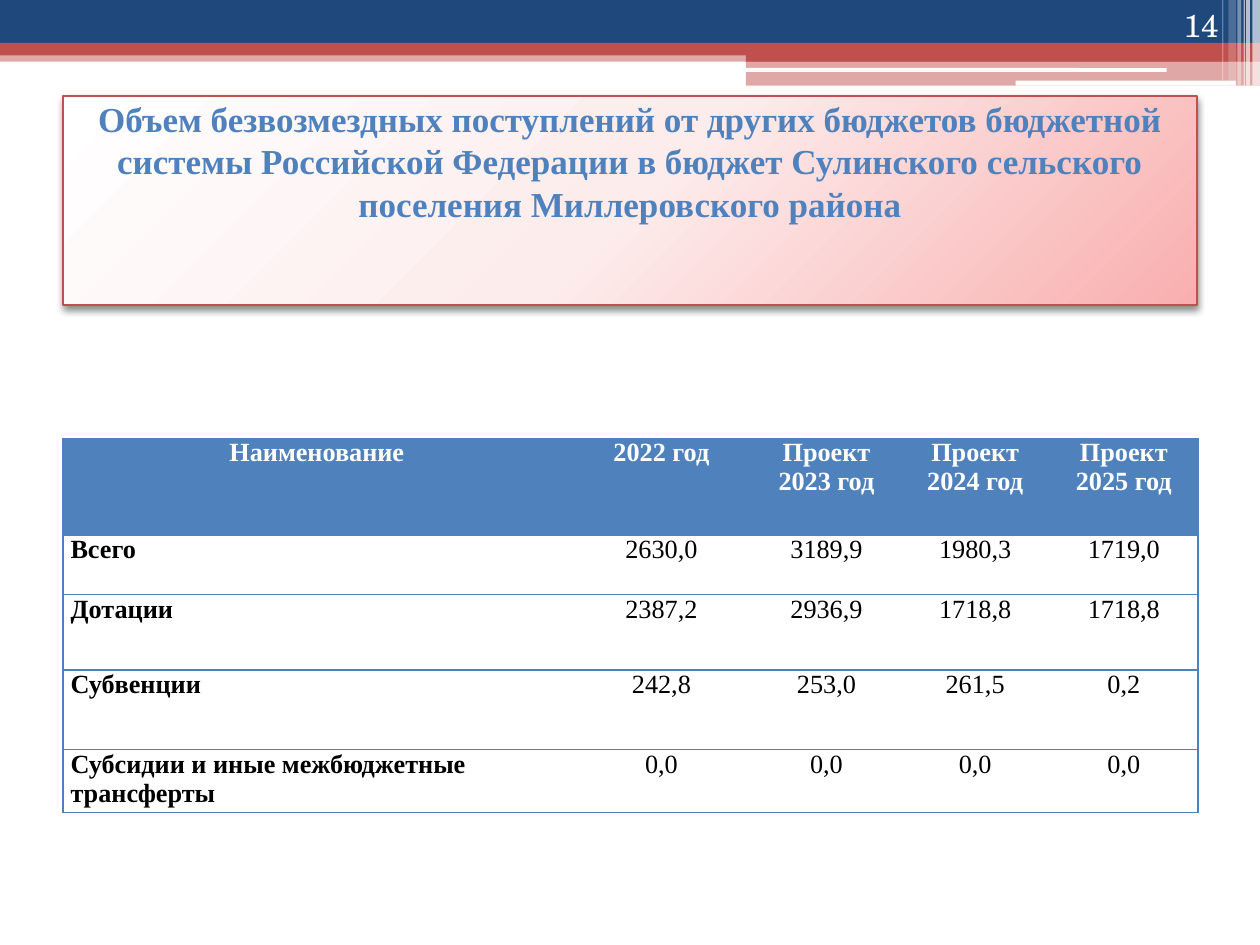
"""Build the slide on intergovernmental transfers to the Sulinskoye settlement budget."""

from typing import NamedTuple

from lxml.etree import SubElement
from pptx import Presentation
from pptx.dml.color import RGBColor
from pptx.enum.shapes import MSO_SHAPE as Preset
from pptx.enum.text import MSO_ANCHOR as Anchor, PP_ALIGN as Align
from pptx.oxml import parse_xml
from pptx.oxml.ns import nsdecls, qn
from pptx.util import Inches, Pt

COLORS = {
    "navy": "1F497D",
    "red": "C0504D",
    "blue": "4F81BD",
    "white": "FFFFFF",
    "black": "000000",
    "blush": "FDECEC",
    "rose": "F9AFAF",
}
SERIF = "Times New Roman"
NUMBER_FONT = "TeX Gyre Schola"


class Band(NamedTuple):
    left: float
    top: float
    width: float
    height: float
    color: str
    opacity: int = 100
    rounded: bool = False


BANDS = [
    Band(0, 0.4, 10, 0.09, "red", 50),
    Band(0, 0, 10, 0.34, "navy"),
    Band(0, 0.34, 10, 0.1, "red"),
    Band(5.92, 0.39, 4.08, 0.1, "red"),
    Band(5.92, 0.48, 4.08, 0.2, "red", 50),
    Band(5.91, 0.54, 3.35, 0.03, "white", rounded=True),
    Band(8.06, 0.64, 1.75, 0.04, "white", rounded=True),
    Band(9.94, 0, 0.06, 0.68, "white", 65),
    Band(9.89, 0, 0.03, 0.68, "white", 65),
    Band(9.87, 0, 0.01, 0.68, "white", 60),
    Band(9.82, 0, 0.03, 0.68, "white", 40),
    Band(9.75, 0, 0.06, 0.64, "white", 20),
    Band(9.7, 0, 0.01, 0.64, "white", 30),
]

TITLE = (
    "Объем безвозмездных поступлений от других бюджетов бюджетной системы "
    "Российской Федерации в бюджет Сулинского сельского поселения "
    "Миллеровского района"
)
COLUMN_WIDTHS = [4.03, 1.44, 1.18, 1.18, 1.18]
ROW_HEIGHTS = [0.77, 0.47, 0.6, 0.63, 0.5]
TRANSFERS = [
    ["Наименование", "2022 год", "Проект 2023 год", "Проект 2024 год", "Проект 2025 год"],
    ["Всего", "2630,0", "3189,9", "1980,3", "1719,0"],
    ["Дотации", "2387,2", "2936,9", "1718,8", "1718,8"],
    ["Субвенции", "242,8", "253,0", "261,5", "0,2"],
    ["Субсидии и иные межбюджетные трансферты", "0,0", "0,0", "0,0", "0,0"],
]


def rgb(color: str) -> RGBColor:
    """Return the named colour."""
    return RGBColor.from_string(COLORS[color])


def write(frame, text: str, size: float, color: str, align, bold=False, font=SERIF, pitch=None) -> None:
    """Write one formatted paragraph into a text frame."""
    frame.word_wrap = True
    paragraph = frame.paragraphs[0]
    paragraph.text = text
    paragraph.alignment = align
    if pitch:
        paragraph.line_spacing = Pt(pitch)
    run_font = paragraph.runs[0].font
    run_font.name, run_font.size, run_font.bold = font, Pt(size), bold
    run_font.color.rgb = rgb(color)


def draw_band(slide, band: Band) -> None:
    """Draw one stripe of the header decoration."""
    preset = Preset.ROUNDED_RECTANGLE if band.rounded else Preset.RECTANGLE
    stripe = slide.shapes.add_shape(preset, *map(Inches, band[:4]))
    stripe.shadow.inherit = False
    stripe.line.fill.background()
    stripe.fill.solid()
    stripe.fill.fore_color.rgb = rgb(band.color)
    if band.opacity < 100:
        tint = stripe.fill._xPr.find(qn("a:solidFill"))[0]
        SubElement(tint, qn("a:alpha"), val=str(band.opacity * 1000))


def draw_title(slide) -> None:
    """Draw the shaded title panel."""
    panel = slide.shapes.add_shape(
        Preset.RECTANGLE, Inches(0.5), Inches(0.76), Inches(9), Inches(1.66)
    )
    panel.shadow.inherit = False
    panel.line.color.rgb = rgb("red")
    panel.line.width = Pt(1)
    panel.fill.background()
    stops = "".join(
        f'<a:gs pos="{position * 1000}"><a:srgbClr val="{COLORS[color]}"/></a:gs>'
        for position, color in [(0, "white"), (50, "blush"), (100, "rose")]
    )
    properties = panel._element.spPr
    properties.replace(
        properties.find(qn("a:noFill")),
        parse_xml(
            f'<a:gradFill {nsdecls("a")}><a:gsLst>{stops}</a:gsLst>'
            '<a:lin ang="2700000" scaled="0"/></a:gradFill>'
        ),
    )
    properties.find(qn("a:effectLst")).append(
        parse_xml(
            f'<a:outerShdw {nsdecls("a")} blurRad="50800" dist="25400" dir="5400000">'
            f'<a:srgbClr val="{COLORS["black"]}"><a:alpha val="45000"/></a:srgbClr></a:outerShdw>'
        )
    )
    frame = panel.text_frame
    frame.vertical_anchor = Anchor.TOP
    frame.margin_top = Inches(0.01)
    write(frame, TITLE, 20, "blue", Align.CENTER, bold=True, pitch=24.3)


def set_borders(cell, first: bool, last: bool) -> None:
    """Rule a cell above and below, and at the outer sides of the table."""
    properties = cell._tc.get_or_add_tcPr()
    for side, ruled in {"L": first, "R": last, "T": True, "B": True}.items():
        line = SubElement(properties, qn(f"a:ln{side}"), w=str(Pt(1)))
        if ruled:
            SubElement(SubElement(line, qn("a:solidFill")), qn("a:srgbClr"), val=COLORS["blue"])
        else:
            SubElement(line, qn("a:noFill"))


def draw_table(slide) -> None:
    """Draw the table of transfers by year."""
    table = slide.shapes.add_table(
        len(ROW_HEIGHTS), len(COLUMN_WIDTHS), Inches(0.5), Inches(3.48), Inches(9), Inches(2.98)
    ).table
    table.first_row = table.horz_banding = False
    for column, width in zip(table.columns, COLUMN_WIDTHS):
        column.width = Inches(width)
    for r, (row, height) in enumerate(zip(table.rows, ROW_HEIGHTS)):
        row.height = Inches(height)
        header = r == 0
        for c, (cell, text) in enumerate(zip(row.cells, TRANSFERS[r])):
            label = c == 0
            set_borders(cell, label, c == len(COLUMN_WIDTHS) - 1)
            cell.margin_left = cell.margin_right = Inches(0.06)
            cell.margin_top = cell.margin_bottom = 0
            if header:
                cell.fill.solid()
                cell.fill.fore_color.rgb = rgb("blue")
            else:
                cell.fill.background()
            align = Align.LEFT if label and not header else Align.CENTER
            color = "white" if header else "black"
            write(cell.text_frame, text, 15, color, align, bold=header or label, pitch=16.6)


def draw_slide_number(slide) -> None:
    """Write the slide number in the header."""
    number = slide.shapes.add_textbox(Inches(8.94), 0, Inches(0.83), Inches(0.4))
    number.text_frame.vertical_anchor = Anchor.BOTTOM
    write(number.text_frame, "14", 18, "white", Align.RIGHT, font=NUMBER_FONT)


def main() -> None:
    """Build and save the presentation."""
    deck = Presentation()
    deck.slide_width, deck.slide_height = Inches(10), Inches(7.5)
    slide = deck.slides.add_slide(deck.slide_layouts[6])
    for band in BANDS:
        draw_band(slide, band)
    draw_title(slide)
    draw_table(slide)
    draw_slide_number(slide)
    deck.save("out.pptx")


if __name__ == "__main__":
    main()
